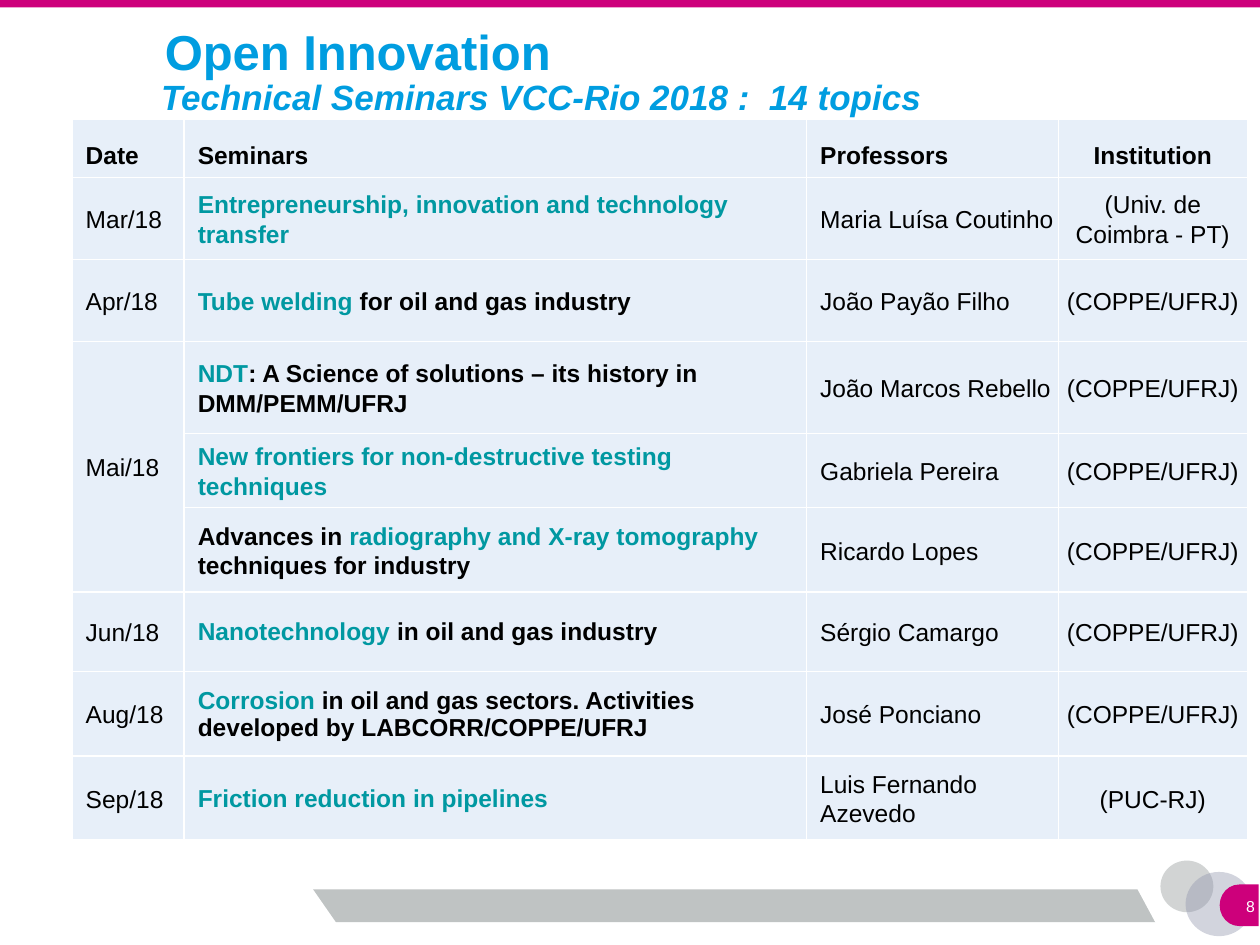
"""Build the Open Innovation seminar slide."""
from lxml.etree import SubElement as Sub
from pptx import Presentation
from pptx.dml.color import RGBColor as RGB
from pptx.enum.shapes import MSO_SHAPE as Kind
from pptx.enum.text import MSO_ANCHOR as Anchor, PP_ALIGN as Align
from pptx.oxml.ns import qn
from pptx.util import Inches, Pt

HUES = {"gray": "BFC3C3", "white": "FFFFFF", "pink": "CD007B", "slate": "9095AC",
        "blue": "009DE0", "teal": "0098A1", "black": "000000", "pale": "E7EFF9"}


def paint(shape, hue, edge=False, alpha=None):
    shape.shadow.inherit = False
    shape.fill.solid()
    shape.fill.fore_color.rgb = RGB.from_string(HUES[hue])
    if edge:
        shape.line.color.rgb = RGB.from_string(HUES[hue])
        shape.line.width = Pt(1)
    else:
        shape.line.fill.background()
    if alpha:
        color = shape._element.spPr.find(qn("a:solidFill"))[0]
        Sub(color, qn("a:alpha"), val=str(alpha * 1000))


def write(para, text, size, hue, bold=False, italic=False):
    run = para.add_run()
    run.text = text
    font = run.font
    font.name, font.size = "Arial", Pt(size)
    font.bold, font.italic = bold, italic
    font.color.rgb = RGB.from_string(HUES[hue])


deck = Presentation()
deck.slide_width, deck.slide_height = Inches(10), Inches(7.5)
slide = deck.slides.add_slide(deck.slide_layouts[6])
shapes = slide.shapes

band = shapes.add_shape(Kind.RECTANGLE, Inches(1.29), Inches(7.06), Inches(8.71), Inches(0.26))
paint(band, "gray")

masks = [
    [(1.22, 6.74), (1.62, 7.5), (0.5, 7.5), (0.5, 6.72)],
    [(5.24, 0.02), (10, 0), (10, 7.5), (9.25, 7.5), (9.25, 7.47)],
]
for mask in masks:
    points = [(Inches(x), Inches(y)) for x, y in mask]
    pen = shapes.build_freeform(*points[0], scale=1.0)
    pen.add_line_segments(points[1:], close=True)
    paint(pen.convert_to_shape(), "white")

marks = [
    (Kind.RECTANGLE, 0, 0, 10, 0.06, "pink", False, None),
    (Kind.OVAL, 9.21, 6.83, 0.42, 0.41, "gray", False, 70),
    (Kind.OVAL, 9.41, 6.92, 0.53, 0.51, "slate", False, 40),
    (Kind.FLOWCHART_DELAY, 9.68, 7.02, 0.31, 0.33, "pink", False, None),
    (Kind.RECTANGLE, 1.36, 6.99, 1.03, 0.38, "white", True, None),
    (Kind.ISOSCELES_TRIANGLE, 2.15, 7, 0.57, 0.41, "white", True, None),
]
for kind, *box, hue, edge, alpha in marks:
    mark = shapes.add_shape(kind, *map(Inches, box))
    paint(mark, hue, edge, alpha)
    if kind == Kind.FLOWCHART_DELAY:
        mark._element.spPr.xfrm.set("flipH", "1")

labels = [
    ("8", (9.55, 7.03, 0.45, 0.32), 0.04, Anchor.MIDDLE, Align.RIGHT, 1, 9, "white", False, False),
    ("Technical Seminars VCC-Rio 2018 :  14 topics", (1.18, 0.55, 8.1, 0.44), 0.1,
     Anchor.BOTTOM, Align.LEFT, 0.9, 20, "blue", True, True),
    ("Open Innovation", (1.21, 0.1, 5.38, 0.59), 0.1,
     Anchor.BOTTOM, Align.LEFT, 0.9, 28, "blue", True, False),
]
for text, box, side, anchor, align, gap, *style in labels:
    frame = shapes.add_textbox(*map(Inches, box)).text_frame
    frame.word_wrap = True
    frame.vertical_anchor = anchor
    frame.margin_left = frame.margin_right = Inches(side)
    para = frame.paragraphs[0]
    para.alignment, para.line_spacing = align, gap
    write(para, text, *style)

coppe = "(COPPE/UFRJ)"
rows = [
    ("Date", "Seminars", "Professors", "Institution"),
    ("Mar/18", "*Entrepreneurship, innovation and technology transfer*",
     "Maria Luísa Coutinho", "(Univ. de Coimbra - PT)"),
    ("Apr/18", "*Tube welding *for oil and gas industry", "João Payão Filho", coppe),
    ("Mai/18", "*NDT*: A Science of solutions – its history in DMM/PEMM/UFRJ",
     "João Marcos Rebello", coppe),
    ("", "*New frontiers for non-destructive testing techniques*", "Gabriela Pereira", coppe),
    ("", "Advances in *radiography and X-ray tomography *techniques for industry",
     "Ricardo Lopes", coppe),
    ("Jun/18", "*Nanotechnology* in oil and gas industry", "Sérgio Camargo", coppe),
    ("Aug/18", "*Corrosion* in oil and gas sectors. Activities developed by LABCORR/COPPE/UFRJ",
     "José Ponciano", coppe),
    ("Sep/18", "*Friction reduction in pipelines*", "Luis Fernando Azevedo", "(PUC-RJ)"),
]
wides = [0.89, 4.94, 2, 1.5]
talls = [0.46, 0.65, 0.65, 0.73, 0.59, 0.67, 0.63, 0.67, 0.67]
grid = shapes.add_table(len(rows), len(wides), Inches(0.57), Inches(0.95),
                        Inches(9.33), Inches(5.71)).table
for col, wide in zip(grid.columns, wides):
    col.width = Inches(wide)
for row, tall in zip(grid.rows, talls):
    row.height = Inches(tall)
grid.cell(3, 0).merge(grid.cell(5, 0))

for r, row in enumerate(rows):
    for c, text in enumerate(row):
        cell = grid.cell(r, c)
        cell.vertical_anchor = Anchor.MIDDLE
        cell.margin_left = cell.margin_right = cell.margin_top = Inches(0.01)
        cell.margin_bottom = 0
        props = cell._tc.get_or_add_tcPr()
        for side in ("L", "R", "T", "B"):
            line = Sub(props, qn(f"a:ln{side}"), w=str(Pt(1)))
            Sub(Sub(line, qn("a:solidFill")), qn("a:srgbClr"), val=HUES["white"])
        cell.fill.solid()
        cell.fill.fore_color.rgb = RGB.from_string(HUES["pale"])
        if not text:
            continue
        para = cell.text_frame.paragraphs[0]
        if c == 3:
            para.alignment = Align.CENTER
        else:
            para._p.get_or_add_pPr().set("marL", str(Inches(0.1)))
        late = r > 5 and c > 0
        para.line_spacing = 1.5 if r == 0 else 1.0 if late and c == 1 else 1.07
        if r > 0 and not late:
            para.space_after = Pt(8)
        for i, part in enumerate(text.split("*")):
            if part:
                write(para, part, 14, "teal" if i % 2 else "black", r == 0 or c == 1)

deck.save("out.pptx")
